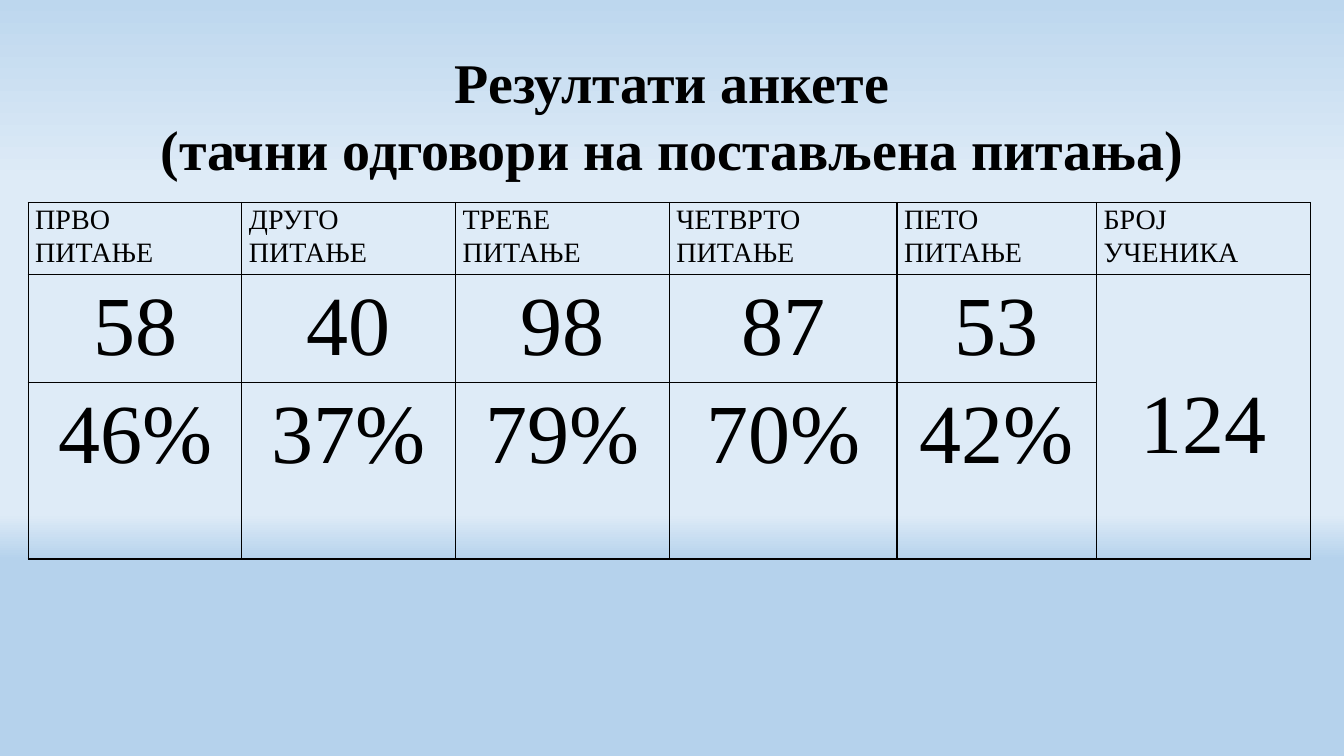
from copy import deepcopy
from dataclasses import dataclass

from lxml.etree import SubElement
from pptx import Presentation
from pptx.dml.color import RGBColor
from pptx.enum.text import MSO_ANCHOR, PP_ALIGN
from pptx.oxml.ns import qn
from pptx.table import _Cell
from pptx.text.text import _Paragraph
from pptx.util import Inches, Length, Pt

BLACK = RGBColor(0x00, 0x00, 0x00)
SKY = RGBColor(0xBD, 0xD7, 0xEE)
PALE = RGBColor(0xDE, 0xEB, 0xF7)
DEEP = RGBColor(0xB5, 0xD2, 0xEC)
FONT = "Times New Roman"
SLIDE_WIDTH = Inches(13.33)
SLIDE_HEIGHT = Inches(7.5)

GRADIENT = [(0, SKY), (0.24, PALE), (0.68, PALE), (0.74, DEEP)]
TITLE = ["Резултати анкете", "(тачни одговори на постављена питања)"]
PUPILS_HEADING, PUPILS = "БРОЈ УЧЕНИКА", "124"
ROW_SHARES = [9.45, 14.15, 23.35]
PUPILS_SHARE = 15.9


@dataclass
class Question:
    heading: str
    correct: str
    percent: str
    share: float = 15.9


QUESTIONS = [
    Question("ПРВО ПИТАЊЕ", "58", "46%"),
    Question("ДРУГО ПИТАЊЕ", "40", "37%"),
    Question("ТРЕЋЕ ПИТАЊЕ", "98", "79%"),
    Question("ЧЕТВРТО ПИТАЊЕ", "87", "70%", 16.95),
    Question("ПЕТО ПИТАЊЕ", "53", "42%", 14.85),
]


def across(percent: float) -> Length:
    return Length(round(SLIDE_WIDTH * percent / 100))


def down(percent: float) -> Length:
    return Length(round(SLIDE_HEIGHT * percent / 100))


def set_font(para: _Paragraph, size: int, bold: bool = False) -> None:
    para.font.name = FONT
    para.font.size = Pt(size)
    para.font.bold = bold
    para.font.color.rgb = BLACK


def draw_borders(cell: _Cell) -> None:
    properties = cell._tc.get_or_add_tcPr()
    for position, side in enumerate(("a:lnL", "a:lnR", "a:lnT", "a:lnB")):
        line = SubElement(properties, qn(side), w=str(Pt(1)))
        fill = SubElement(line, qn("a:solidFill"))
        SubElement(fill, qn("a:srgbClr"), val=str(BLACK))
        properties.insert(position, line)


def fill_cell(cell: _Cell, text: str, size: int, align: PP_ALIGN) -> None:
    cell.margin_left = cell.margin_right = Inches(0.07)
    cell.margin_top = cell.margin_bottom = 0
    para = cell.text_frame.paragraphs[0]
    para.text = text
    para.alignment = align
    para.line_spacing = 1.07
    set_font(para, size)


deck = Presentation()
deck.slide_width, deck.slide_height = SLIDE_WIDTH, SLIDE_HEIGHT
page = deck.slides.add_slide(deck.slide_layouts[6])

# Background gradient, running from top to bottom
background = page.background.fill
background.gradient()
background.gradient_angle = 270
stop_list = page.element.find(".//" + qn("a:gsLst"))
while len(stop_list) < len(GRADIENT):
    stop_list.append(deepcopy(stop_list[-1]))
for stop, (position, color) in zip(background.gradient_stops, GRADIENT):
    stop.position = position
    stop.color.rgb = color

# Title
box = page.shapes.add_textbox(across(6.6), down(5.6), across(86.8), down(19.3))
frame = box.text_frame
frame.word_wrap = True
for index, line_text in enumerate(TITLE):
    para = frame.add_paragraph() if index else frame.paragraphs[0]
    para.text = line_text
    para.alignment = PP_ALIGN.CENTER
    set_font(para, 40, bold=True)

# Results table
column_shares = [question.share for question in QUESTIONS] + [PUPILS_SHARE]
table = page.shapes.add_table(
    len(ROW_SHARES), len(column_shares), across(2.1), down(26.8),
    across(sum(column_shares)), down(sum(ROW_SHARES))).table
table.first_row = table.horz_banding = False
for column, share in zip(table.columns, column_shares):
    column.width = across(share)
for row, share in zip(table.rows, ROW_SHARES):
    row.height = down(share)

for index, question in enumerate(QUESTIONS):
    fill_cell(table.cell(0, index), question.heading, 20, PP_ALIGN.LEFT)
    fill_cell(table.cell(1, index), question.correct, 60, PP_ALIGN.CENTER)
    fill_cell(table.cell(2, index), question.percent, 60, PP_ALIGN.CENTER)

# Number of pupils, over both result rows
last = len(QUESTIONS)
fill_cell(table.cell(0, last), PUPILS_HEADING, 20, PP_ALIGN.LEFT)
total = table.cell(1, last)
total.merge(table.cell(2, last))
fill_cell(total, PUPILS, 60, PP_ALIGN.CENTER)
total.vertical_anchor = MSO_ANCHOR.MIDDLE
total.margin_top = Inches(0.1)

for cell in table.iter_cells():
    cell.fill.background()
    draw_borders(cell)

deck.save("out.pptx")
